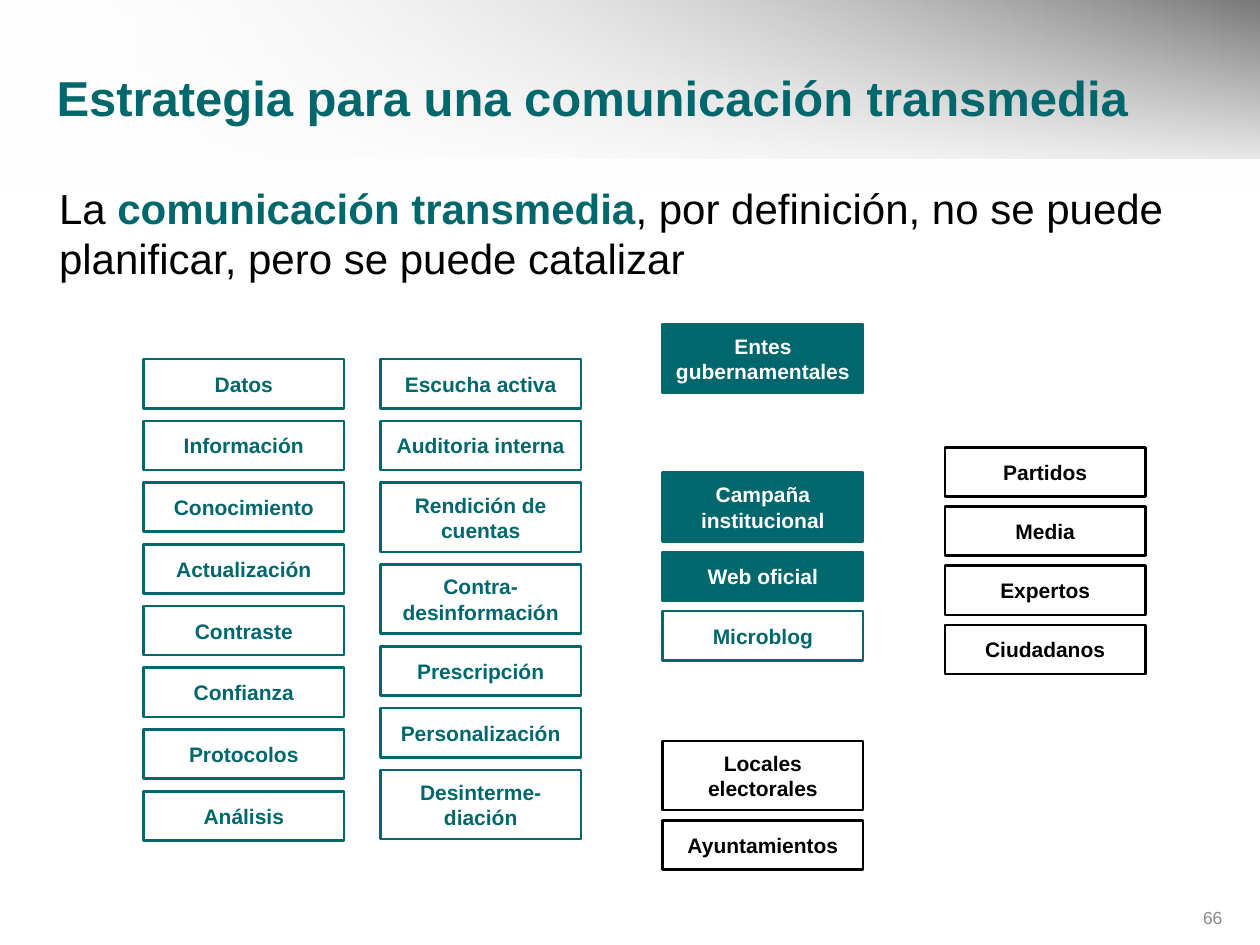
from lxml import etree
from pptx import Presentation
from pptx import util as u
from pptx.dml.color import RGBColor
from pptx.enum import shapes, text
from pptx.oxml import ns

COLORS = {"teal": "00676C", "black": "000000", "white": "FFFFFF", "grey": "898989"}
STYLES = {
    "solid": ("teal", "white"),
    "teal": (None, "teal"),
    "black": (None, "black"),
}
WIDTH, HEIGHT = 10, 7.5
BOX_WIDTH = 1.59
BOX_HEIGHTS = {1: 0.39, 2: 0.55}
COLUMNS = {"content": 1.14, "actions": 3.02, "official": 5.26, "others": 7.5}

# Each stack: column, top, gap, entries of (label, lines, style)
STACKS = [
    ("content", 2.85, 0.1, [(label, 1, "teal") for label in (
        "Datos", "Información", "Conocimiento", "Actualización",
        "Contraste", "Confianza", "Protocolos", "Análisis")]),
    ("actions", 2.85, 0.1, [
        ("Escucha activa", 1, "teal"),
        ("Auditoria interna", 1, "teal"),
        ("Rendición de cuentas", 2, "teal"),
        ("Contra-desinformación", 2, "teal"),
        ("Prescripción", 1, "teal"),
        ("Personalización", 1, "teal"),
        ("Desinterme-diación", 2, "teal")]),
    ("official", 2.57, 0.08, [("Entes gubernamentales", 2, "solid")]),
    ("official", 3.75, 0.08, [
        ("Campaña institucional", 2, "solid"),
        ("Web oficial", 1, "solid"),
        ("Microblog", 1, "teal")]),
    ("official", 5.88, 0.08, [
        ("Locales electorales", 2, "black"),
        ("Ayuntamientos", 1, "black")]),
    ("others", 3.55, 0.08, [(label, 1, "black") for label in (
        "Partidos", "Media", "Expertos", "Ciudadanos")]),
]


def rgb(name):
    """Return the palette colour with this name."""
    return RGBColor.from_string(COLORS[name])


def apply(target, values):
    """Set each attribute of the target from a dict."""
    for name, value in values.items():
        setattr(target, name, value)


def write(frame, runs, size, align, anchor, inset=0.1):
    """Write (wording, colour, bold) runs as one paragraph."""
    apply(frame, {"word_wrap": True, "vertical_anchor": anchor,
                  "margin_left": u.Inches(inset), "margin_right": u.Inches(inset)})
    paragraph = frame.paragraphs[0]
    paragraph.alignment = align
    for wording, color, bold in runs:
        run = paragraph.add_run()
        run.text = wording
        apply(run.font, {"name": "Arial", "size": u.Pt(size), "bold": bold})
        run.font.color.rgb = rgb(color)


def add_rect(slide, left, top, width, height):
    """Add a rectangle without shadow."""
    rect = slide.shapes.add_shape(
        shapes.MSO_SHAPE.RECTANGLE, *map(u.Inches, (left, top, width, height)))
    rect.shadow.inherit = False
    return rect


def add_fade(slide, height, end, start_alpha, angle):
    """Add a full-width band fading from translucent white to an end colour."""
    band = add_rect(slide, 0, 0, WIDTH, height)
    band.line.fill.background()
    band.fill.gradient()
    first, last = band.fill.gradient_stops
    first.color.rgb, last.color.rgb = rgb("white"), rgb(end)
    first.position, last.position = 0, 1
    band.fill.gradient_angle = -angle % 360
    white = band._element.spPr.find(".//" + ns.qn("a:srgbClr"))
    etree.SubElement(white, ns.qn("a:alpha"), val=str(start_alpha * 1000))


def add_text(slide, place, runs, size, align=text.PP_ALIGN.LEFT,
             anchor=text.MSO_ANCHOR.MIDDLE):
    """Add a text box at (left, top, width, height)."""
    box = slide.shapes.add_textbox(*map(u.Inches, place))
    write(box.text_frame, runs, size, align, anchor)


def add_stack(slide, column, top, gap, entries):
    """Add labelled boxes one below another with equal gaps."""
    for label, lines, style in entries:
        height = BOX_HEIGHTS[lines]
        fill, ink = STYLES[style]
        box = add_rect(slide, COLUMNS[column], top, BOX_WIDTH, height)
        if fill:
            box.fill.solid()
            box.fill.fore_color.rgb = rgb(fill)
        else:
            box.fill.background()
        box.line.color.rgb = rgb(fill or ink)
        box.line.width = u.Pt(1.5)
        write(box.text_frame, [(label, ink, True)], 12,
              text.PP_ALIGN.CENTER, text.MSO_ANCHOR.MIDDLE, inset=0.08)
        top += height + gap


def main():
    """Build the slide and save it."""
    deck = Presentation()
    apply(deck, {"slide_width": u.Inches(WIDTH), "slide_height": u.Inches(HEIGHT)})
    slide = deck.slides.add_slide(deck.slide_layouts[6])
    add_fade(slide, 1.26, "black", 0, 0)
    add_fade(slide, 1.5, "white", 47, 90)
    add_text(slide, (9.17, 7.14, 0.63, 0.29), [("66", "grey", False)], 10,
             align=text.PP_ALIGN.RIGHT)
    add_text(slide, (0.37, 1.4, 9.21, 5.66), [
        ("La ", "black", False),
        ("comunicación transmedia", "teal", True),
        (", por definición, no se puede planificar, pero se puede catalizar",
         "black", False)], 24, anchor=text.MSO_ANCHOR.TOP)
    add_text(slide, (0.35, 0.46, 9.21, 0.62),
             [("Estrategia para una comunicación transmedia", "teal", True)], 28)
    for stack in STACKS:
        add_stack(slide, *stack)
    deck.save("out.pptx")


if __name__ == "__main__":
    main()
